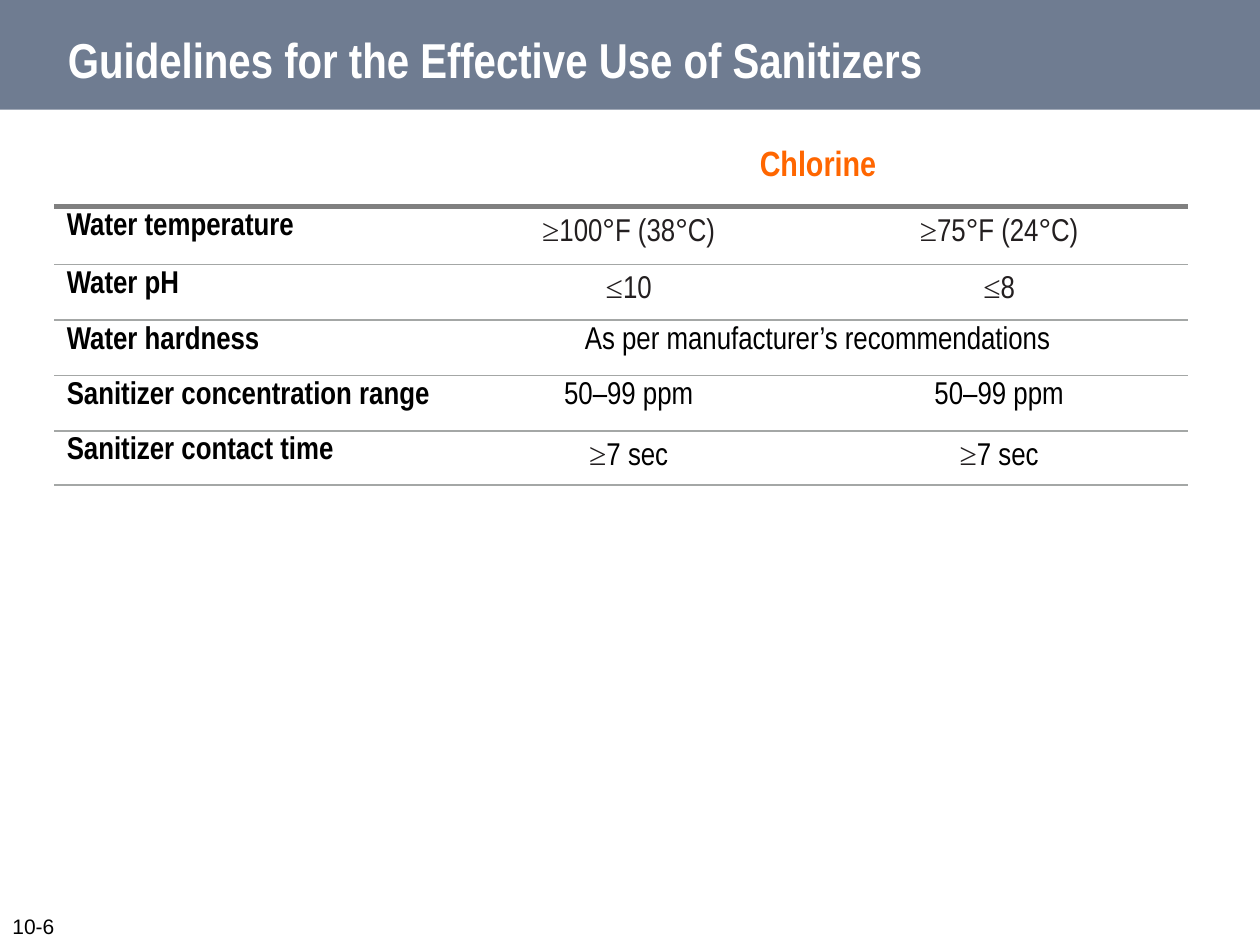
from dataclasses import dataclass
from typing import Optional

from lxml import etree
from pptx import Presentation
from pptx.dml.color import RGBColor
from pptx.enum.shapes import MSO_SHAPE
from pptx.enum.text import MSO_ANCHOR, PP_ALIGN
from pptx.oxml.ns import qn
from pptx.util import Inches, Pt

RECTANGLE = MSO_SHAPE.RECTANGLE
BOTTOM = MSO_ANCHOR.BOTTOM
CENTER = PP_ALIGN.CENTER

COLORS = {
    "band": "6F7C91",
    "white": "FFFFFF",
    "black": "000000",
    "ink": "231F20",
    "accent": "FF6600",
    "header_rule": "808080",
    "row_rule": "A4A7A6",
}
NARROW = "Arial Narrow"
SERIF = "Times New Roman"
COLUMN_WIDTHS = (3.12, 2.88, 3)
ROW_HEIGHTS = (0.39, 0.46, 0.44, 0.44, 0.44, 0.43)


@dataclass
class Value:
    text: str
    sign: str = ""
    color: str = "black"


@dataclass
class Guideline:
    label: str
    values: list[Value]


@dataclass
class Rule:
    color: str
    points: float


HEADER_RULE = Rule("header_rule", 3)
ROW_RULE = Rule("row_rule", 1)

GUIDELINES = [
    Guideline("Water temperature", [Value("100°F (38°C)", "≥", "ink"), Value("75°F (24°C)", "≥", "ink")]),
    Guideline("Water pH", [Value("10", "≤", "ink"), Value("8", "≤", "ink")]),
    Guideline("Water hardness", [Value("As per manufacturer’s recommendations")]),
    Guideline("Sanitizer concentration range", [Value("50–99 ppm")] * 2),
    Guideline("Sanitizer contact time", [Value("7 sec", "≥")] * 2),
]


def add_run(p, text: str, size: float, color: str = "black", bold: bool = False, font: str = NARROW) -> None:
    r = p.add_run()
    r.text = text
    r.font.size = Pt(size)
    r.font.name = font
    r.font.bold = bold
    r.font.color.rgb = RGBColor.from_string(COLORS[color])


def add_text(s, box: tuple[float, float, float, float]):
    tf = s.shapes.add_textbox(*map(Inches, box)).text_frame
    tf.word_wrap = True
    tf.vertical_anchor = BOTTOM
    return tf.paragraphs[0]


def set_border(cell, side: str, rule: Optional[Rule]) -> None:
    ln = etree.SubElement(cell._tc.get_or_add_tcPr(), qn(f"a:{side}"))
    if rule is None:
        etree.SubElement(ln, qn("a:noFill"))
        return
    ln.set("w", str(Pt(rule.points)))
    fill = etree.SubElement(ln, qn("a:solidFill"))
    etree.SubElement(fill, qn("a:srgbClr"), val=COLORS[rule.color])


def style_cells(table) -> None:
    rules = [None, HEADER_RULE] + [ROW_RULE] * len(GUIDELINES)
    for i, row in enumerate(table.rows):
        for cell in row.cells:
            borders = {"lnL": None, "lnR": None, "lnT": rules[i], "lnB": rules[i + 1]}
            for side, rule in borders.items():
                set_border(cell, side, rule)
            cell.fill.solid()
            cell.fill.fore_color.rgb = RGBColor.from_string(COLORS["white"])


def add_header(table) -> None:
    table.cell(0, 0).merge(table.cell(0, 2))
    p = table.cell(0, 0).text_frame.paragraphs[0]
    p.line_spacing = 0.5
    pPr = p._p.get_or_add_pPr()
    pPr.set("marL", str(Inches(5.75)))
    pPr.set("indent", str(Inches(-0.25)))
    add_run(p, "Chlorine", 20, "accent", True)


def add_guideline(table, row: int, guideline: Guideline) -> None:
    add_run(table.cell(row, 0).text_frame.paragraphs[0], guideline.label, 18, bold=True)
    if len(guideline.values) == 1:
        table.cell(row, 1).merge(table.cell(row, 2))
    for col, value in enumerate(guideline.values, start=1):
        p = table.cell(row, col).text_frame.paragraphs[0]
        p.alignment = CENTER
        if value.sign:
            add_run(p, value.sign, 18, "ink", font=SERIF)
        add_run(p, value.text, 18, value.color)


def add_sanitizer_table(s) -> None:
    table = s.shapes.add_table(
        len(ROW_HEIGHTS), len(COLUMN_WIDTHS), Inches(0.43), Inches(1.25),
        Inches(sum(COLUMN_WIDTHS)), Inches(sum(ROW_HEIGHTS)),
    ).table
    table.first_row = False
    table.horz_banding = False
    for column, width in zip(table.columns, COLUMN_WIDTHS):
        column.width = Inches(width)
    for row, height in zip(table.rows, ROW_HEIGHTS):
        row.height = Inches(height)
    style_cells(table)
    add_header(table)
    for i, guideline in enumerate(GUIDELINES, start=1):
        add_guideline(table, i, guideline)


def main() -> None:
    prs = Presentation()
    prs.slide_width = Inches(10)
    prs.slide_height = Inches(7.5)
    s = prs.slides.add_slide(prs.slide_layouts[6])

    band = s.shapes.add_shape(RECTANGLE, 0, 0, prs.slide_width, Inches(0.87))
    band.shadow.inherit = False
    band.fill.solid()
    band.fill.fore_color.rgb = RGBColor.from_string(COLORS["band"])
    band.line.fill.background()

    title = add_text(s, (0.44, 0.18, 9.09, 0.57))
    add_run(title, "Guidelines for the Effective Use of Sanitizers", 28, "white", True)
    page = add_text(s, (0, 7.2, 0.62, 0.3))
    add_run(page, "10-6", 12, font="Arial")
    add_sanitizer_table(s)

    prs.save("out.pptx")


if __name__ == "__main__":
    main()
